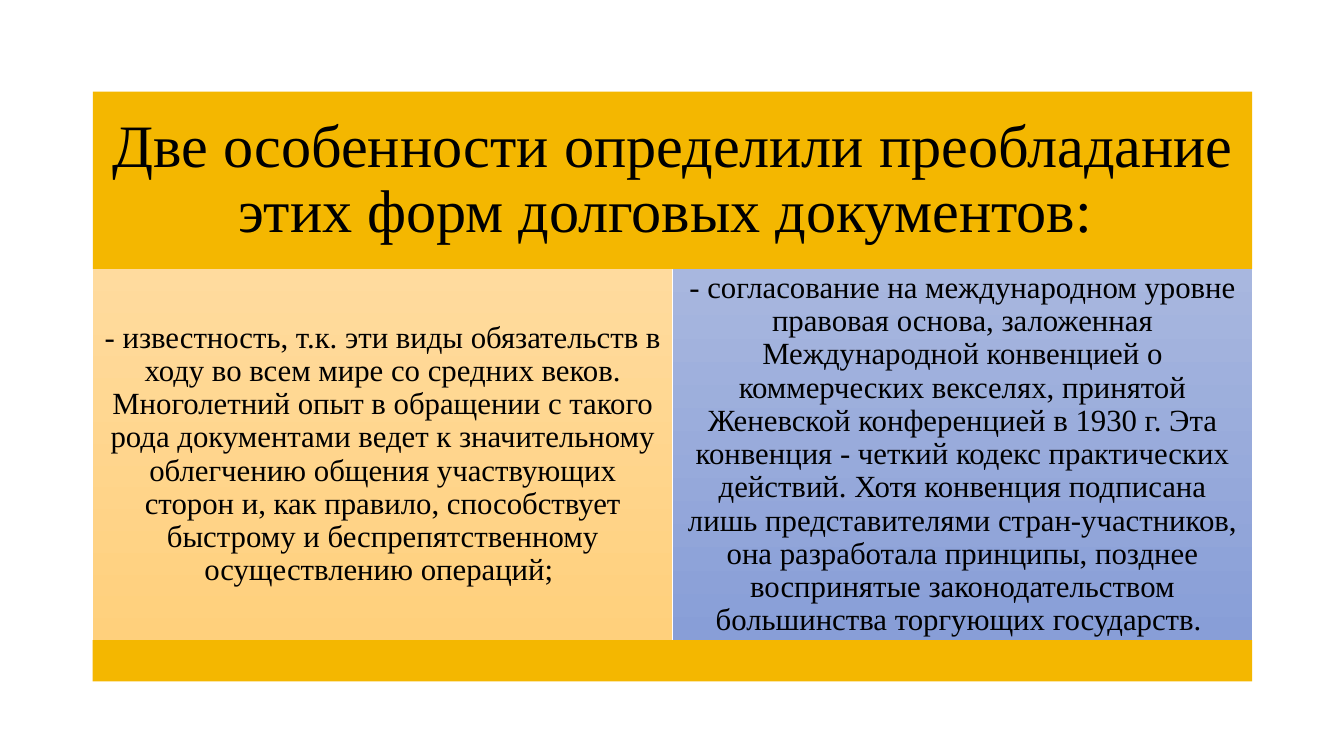
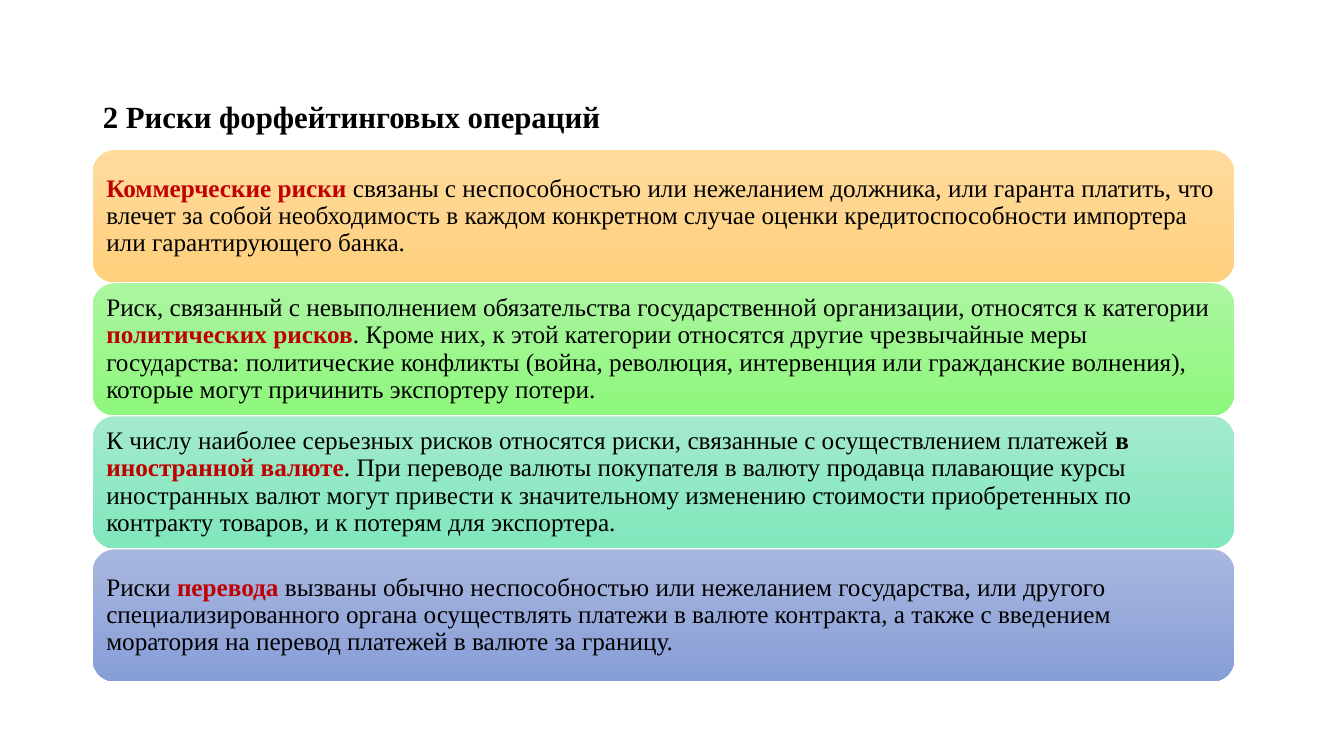
from pptx import Presentation
from pptx.dml.color import RGBColor
from pptx.enum.shapes import MSO_SHAPE
from pptx.enum.text import MSO_ANCHOR, MSO_AUTO_SIZE, PP_ALIGN
from pptx.util import Inches, Pt

FONT = "Times New Roman"
BLACK = "000000"
RED = "C00000"
GOLD = "F4B700"
ORANGE = ("FFDB9E", "FFD07C")
GREEN = ("ACF6A0", "8EF77D")
TEAL = ("A3EACC", "81E7BD")
BLUE = ("A8B7DF", "889ED7")

LEFT = 0.92
TOP = 0.91
WIDTH = 11.5

FEATURES = [
    (ORANGE, "- известность, т.к. эти виды обязательств в ходу во всем мире со средних веков. "
             "Многолетний опыт в обращении с такого рода документами ведет к значительному "
             "облегчению общения участвующих сторон и, как правило, способствует быстрому и "
             "беспрепятственному осуществлению операций; "),
    (BLUE, "- согласование на международном уровне правовая основа, заложенная Международной "
           "конвенцией о коммерческих векселях, принятой Женевской конференцией в 1930 г. Эта "
           "конвенция - четкий кодекс практических действий. Хотя конвенция подписана лишь "
           "представителями стран-участников, она разработала принципы, позднее воспринятые "
           "законодательством большинства торгующих государств. "),
]

RISKS = [
    (ORANGE, [
        ("Коммерческие риски ", True, RED),
        ("связаны с неспособностью или нежеланием должника, или гаранта платить, что влечет за "
         "собой необходимость в каждом конкретном случае оценки кредитоспособности импортера "
         "или гарантирующего банка.", False, BLACK),
    ]),
    (GREEN, [
        ("Риск, связанный с невыполнением обязательства государственной организации, относятся "
         "к категории ", False, BLACK),
        ("политических рисков", True, RED),
        (". Кроме них, к этой категории относятся другие чрезвычайные меры государства: "
         "политические конфликты (война, революция, интервенция или гражданские волнения), "
         "которые могут причинить экспортеру потери.", False, BLACK),
    ]),
    (TEAL, [
        ("К числу наиболее серьезных рисков относятся риски, связанные с осуществлением "
         "платежей ", False, BLACK),
        ("в ", True, BLACK),
        ("иностранной валюте", True, RED),
        (". При переводе валюты покупателя в валюту продавца плавающие курсы иностранных валют "
         "могут привести к значительному изменению стоимости приобретенных по контракту "
         "товаров, и к потерям для экспортера.", False, BLACK),
    ]),
    (BLUE, [
        ("Риски ", False, BLACK),
        ("перевода", True, RED),
        (" вызваны обычно неспособностью или нежеланием государства, или другого "
         "специализированного органа осуществлять платежи в валюте контракта, а также с "
         "введением моратория на перевод платежей в валюте за границу.", False, BLACK),
    ]),
]


def color(hex_value):
    return RGBColor.from_string(hex_value)


def fill_solid(shape, hex_value):
    shape.fill.solid()
    shape.fill.fore_color.rgb = color(hex_value)


def fill_gradient(shape, colors):
    shape.fill.gradient()
    shape.fill.gradient_angle = 270
    for stop, hex_value in zip(shape.fill.gradient_stops, colors):
        stop.color.rgb = color(hex_value)


def set_text(shape, spans, size, align, inset, anchor=MSO_ANCHOR.MIDDLE):
    frame = shape.text_frame
    frame.word_wrap = True
    frame.auto_size = MSO_AUTO_SIZE.NONE
    frame.vertical_anchor = anchor
    frame.margin_left = frame.margin_right = Inches(inset)
    frame.margin_top = frame.margin_bottom = Inches(inset)
    para = frame.paragraphs[0]
    para.alignment = align
    para.line_spacing = 0.9
    para.font.name = FONT
    para.font.size = Pt(size)
    for text, bold, hex_value in spans:
        span = para.add_run()
        span.text = text
        span.font.bold = bold
        span.font.color.rgb = color(hex_value)


def add_title(page, text, height, size, align, inset, bold, anchor):
    title = page.shapes.title
    title.left, title.top = Inches(LEFT), Inches(TOP)
    title.width, title.height = Inches(WIDTH), Inches(height)
    set_text(title, [(text, bold, BLACK)], size, align, inset, anchor)
    return title


def add_panel(page, kind, left, top, width, height):
    panel = page.shapes.add_shape(kind, Inches(left), Inches(top), Inches(width), Inches(height))
    panel.shadow.inherit = False
    panel.line.fill.background()
    return panel


def build_features(page):
    title_height, panel_height, band_height = 1.76, 3.68, 0.41
    title = add_title(page, "Две особенности определили преобладание этих форм долговых документов: ",
                      title_height, 43, PP_ALIGN.CENTER, 0.18, False, MSO_ANCHOR.MIDDLE)
    fill_solid(title, GOLD)
    panel_top = TOP + title_height
    panel_width = WIDTH / len(FEATURES)
    for index, (colors, text) in enumerate(FEATURES):
        panel = add_panel(page, MSO_SHAPE.RECTANGLE, LEFT + index * panel_width, panel_top,
                          panel_width, panel_height)
        fill_gradient(panel, colors)
        set_text(panel, [(text, False, BLACK)], 22, PP_ALIGN.CENTER, 0.09)
    band = add_panel(page, MSO_SHAPE.RECTANGLE, LEFT, panel_top + panel_height, WIDTH, band_height)
    fill_solid(band, GOLD)


def build_risks(page):
    first_top, pitch, height = 1.49, 1.32, 1.31
    add_title(page, "2 Риски форфейтинговых операций", 0.5, 22, PP_ALIGN.LEFT, 0.1, True,
              MSO_ANCHOR.TOP)
    for index, (colors, spans) in enumerate(RISKS):
        panel = add_panel(page, MSO_SHAPE.ROUNDED_RECTANGLE, LEFT, first_top + index * pitch,
                          11.32, height)
        fill_gradient(panel, colors)
        set_text(panel, spans, 18, PP_ALIGN.LEFT, 0.07)


def main():
    deck = Presentation()
    deck.slide_width, deck.slide_height = Inches(13.33), Inches(7.5)
    title_only = deck.slide_layouts[5]
    for build in (build_features, build_risks):
        build(deck.slides.add_slide(title_only))
    deck.save("out.pptx")


if __name__ == "__main__":
    main()
